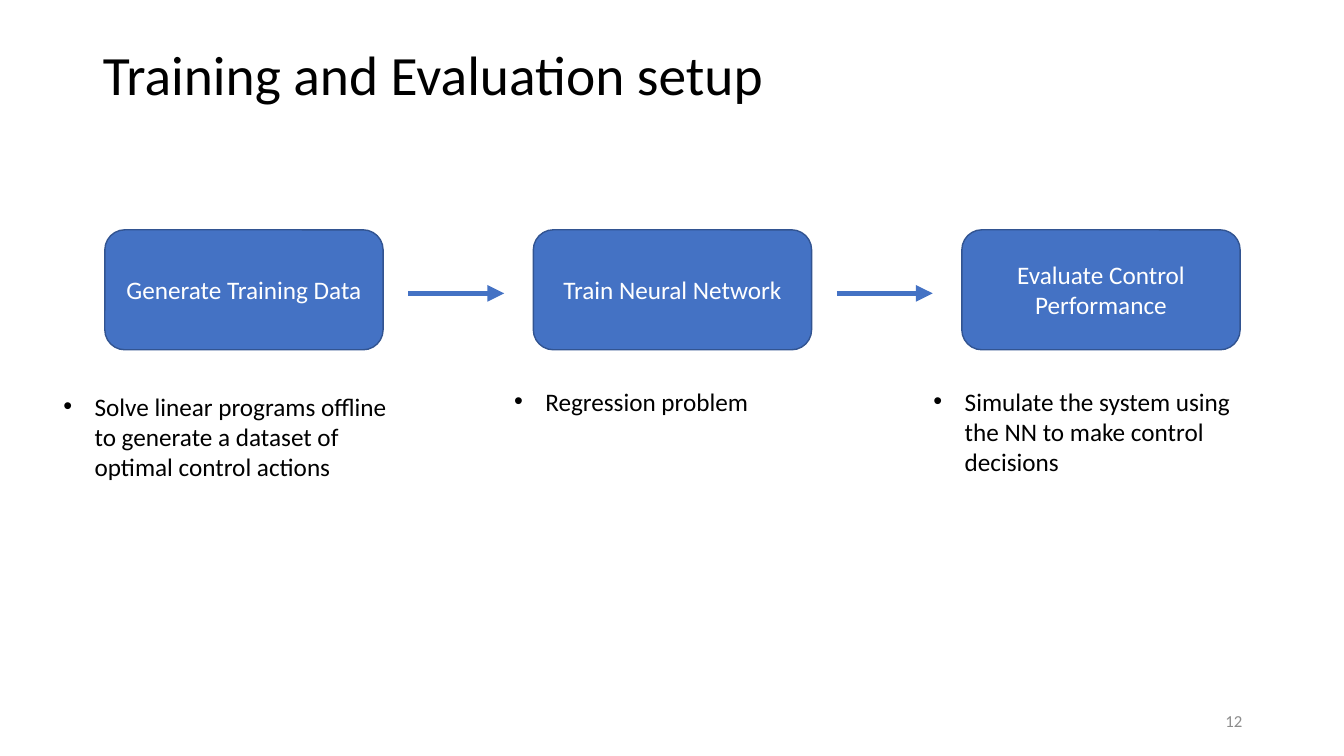
from pptx import Presentation
from pptx.dml.color import RGBColor
from pptx.enum.shapes import MSO_CONNECTOR as Connector, MSO_SHAPE as Shape
from pptx.enum.text import MSO_ANCHOR as Anchor, MSO_AUTO_SIZE as AutoSize, PP_ALIGN as Align
from pptx.oxml.ns import qn
from pptx.util import Inches, Pt
from lxml.etree import SubElement

COLORS = {"text": "000000", "number": "8C8C8C", "box": "4472C4",
          "border": "325491", "label": "FFFFFF"}


class SlideBuilder:
    """Holds the style and the slide being filled."""

    font = "Calibri"

    def __init__(self, slide):
        self.slide = slide

    def color(self, name):
        return RGBColor.from_string(COLORS[name])

    def set_text(self, shape, text, size, color, align=Align.LEFT, anchor=Anchor.MIDDLE):
        frame = shape.text_frame
        frame.text = text
        frame.word_wrap = True
        frame.vertical_anchor = anchor
        para = frame.paragraphs[0]
        para.alignment = align
        font = para.runs[0].font
        font.name, font.size = self.font, Pt(size)
        font.color.rgb = self.color(color)
        return para

    def title(self, text, left, top, width, height):
        title = self.slide.shapes.title
        title.left, title.top = Inches(left), Inches(top)
        title.width, title.height = Inches(width), Inches(height)
        para = self.set_text(title, text, 39.6, "text")
        para.line_spacing = 0.9
        title.text_frame.auto_size = AutoSize.NONE

    def text_box(self, left, top, width, height):
        return self.slide.shapes.add_textbox(
            Inches(left), Inches(top), Inches(width), Inches(height))

    def page_number(self, text, left, top, width, height):
        box = self.text_box(left, top, width, height)
        self.set_text(box, text, 12, "number", Align.RIGHT)

    def step(self, text, left, top, width, height):
        box = self.slide.shapes.add_shape(
            Shape.ROUNDED_RECTANGLE, Inches(left), Inches(top), Inches(width), Inches(height))
        box.shadow.inherit = False
        box.fill.solid()
        box.fill.fore_color.rgb = self.color("box")
        box.line.color.rgb = self.color("border")
        box.line.width = Pt(1)
        self.set_text(box, text, 18, "label", Align.CENTER)

    def arrow(self, left, top, length):
        arrow = self.slide.shapes.add_connector(
            Connector.STRAIGHT, Inches(left), Inches(top), Inches(left + length), Inches(top))
        arrow.line.color.rgb = self.color("box")
        arrow.line.width = Pt(4)
        properties = arrow._element.spPr
        SubElement(properties.find(qn("a:ln")), qn("a:tailEnd"), type="triangle")
        SubElement(properties, qn("a:effectLst"))

    def bullet(self, text, left, top, width, height):
        box = self.text_box(left, top, width, height)
        para = self.set_text(box, text, 18, "text", anchor=Anchor.TOP)
        box.text_frame.auto_size = AutoSize.SHAPE_TO_FIT_TEXT
        properties = para._p.get_or_add_pPr()
        properties.set("marL", str(Inches(0.31)))
        properties.set("indent", str(-Inches(0.31)))
        SubElement(properties, qn("a:buFont"), typeface="Arial")
        SubElement(properties, qn("a:buChar"), char="•")


def main():
    deck = Presentation()
    deck.slide_width, deck.slide_height = Inches(13.33), Inches(7.5)
    title_only = deck.slide_layouts[5]
    page = SlideBuilder(deck.slides.add_slide(title_only))

    # Title and page number
    page.title("Training and Evaluation setup", 0.92, 0.4, 11.5, 0.74)
    page.page_number("12", 9.42, 6.95, 3, 0.4)

    # Process steps at an equal pitch, joined by arrows
    first_left, pitch, box_width = 1.04, 4.25, 2.76
    steps = ["Generate Training Data", "Train Neural Network", "Evaluate Control Performance"]
    for index, label in enumerate(steps):
        left = first_left + index * pitch
        page.step(label, left, 2.28, box_width, 1.19)
        if index < len(steps) - 1:
            page.arrow(left + box_width + 0.25, 2.91, 0.95)

    # Explanation below each step
    notes = [
        ("Solve linear programs offline to generate a dataset of optimal control actions",
         0.53, 3.83, 1.01),
        ("Regression problem", 5, 3.78, 0.4),
        ("Simulate the system using the NN to make control decisions", 9.16, 3.78, 1.01),
    ]
    for text, left, top, height in notes:
        page.bullet(text, left, top, 3.52, height)

    deck.save("out.pptx")


if __name__ == "__main__":
    main()
